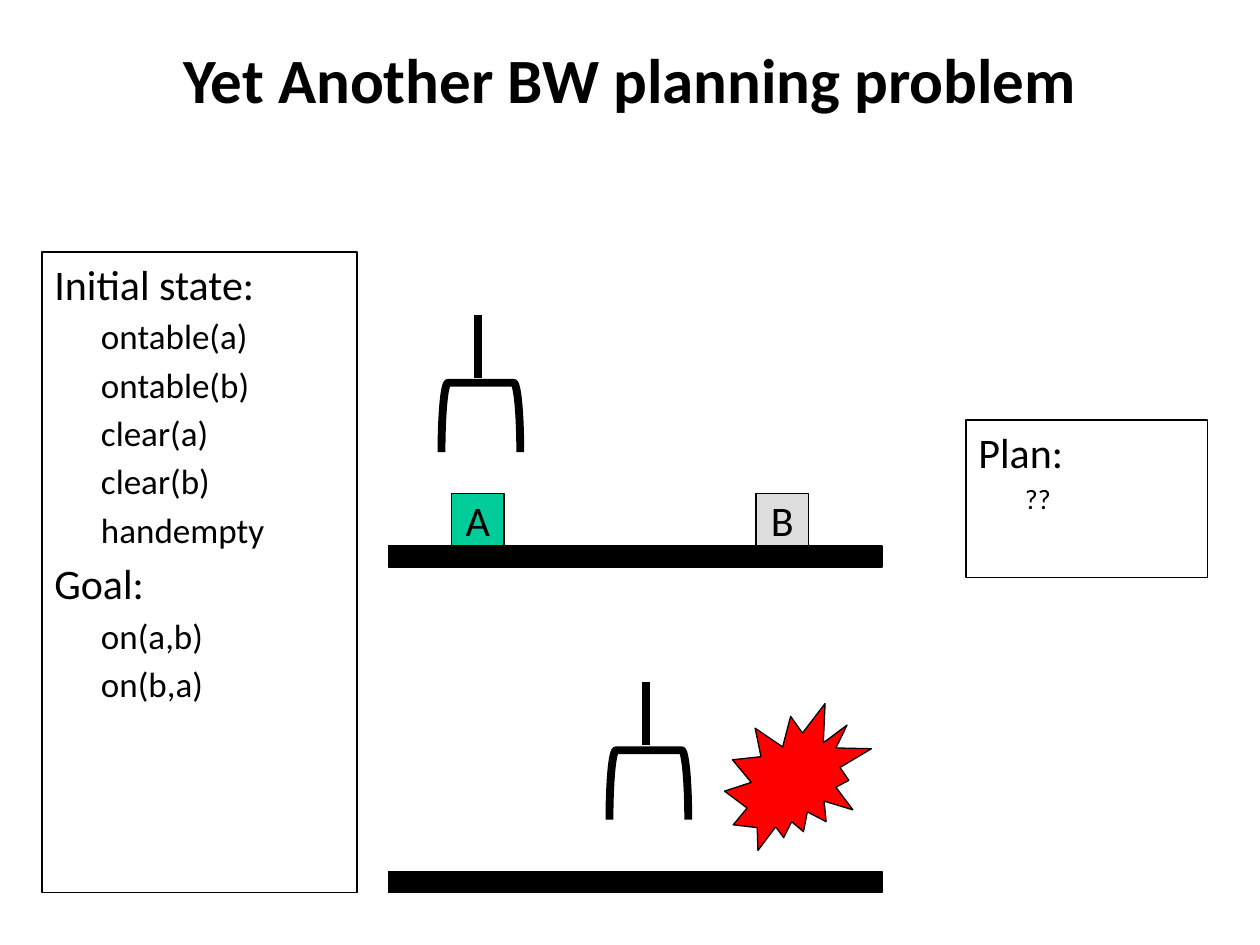
from lxml import etree
from pptx import Presentation
from pptx import util as u
from pptx.dml.color import RGBColor
from pptx.enum import shapes, text
from pptx.oxml import ns

BLACK = RGBColor(0x00, 0x00, 0x00)
GREEN = RGBColor(0x00, 0xCC, 0x99)
GREY = RGBColor(0xDD, 0xDD, 0xDD)
RED = RGBColor(0xFF, 0x00, 0x00)
FONT = "Calibri"

# Slide size and a grid of twelve units to the inch
WIDTH, HEIGHT = u.Inches(10), u.Inches(7.5)
UNIT = WIDTH / 120
BLOCK = 5
TABLE_LEFT, TABLE_WIDTH, TABLE_THICKNESS = 37, 47, 2


def grid(*units):
    return [u.Emu(round(n * UNIT)) for n in units]


def add_run(paragraph, words, size, bold=False):
    run = paragraph.add_run()
    run.text = words
    run.font.name = FONT
    run.font.size = u.Pt(size)
    run.font.bold = bold
    run.font.color.rgb = BLACK


def add_figure(slide, kind, box, fill=None, line_width=0.75):
    figure = slide.shapes.add_shape(kind, *grid(*box))
    figure.shadow.inherit = False
    if fill is None:
        figure.fill.background()
    else:
        figure.fill.solid()
        figure.fill.fore_color.rgb = fill
    figure.line.color.rgb = BLACK
    figure.line.width = u.Pt(line_width)
    return figure


def add_panel(slide, box, sections, item_size):
    """Framed outline: headings with indented items below them."""
    panel = add_figure(slide, shapes.MSO_SHAPE.RECTANGLE, box)
    frame = panel.text_frame
    frame.word_wrap = True
    frame.vertical_anchor = text.MSO_ANCHOR.TOP
    lines = []
    for heading, items in sections:
        lines.append((heading, 0, 24, 0.25))
        lines += [(item, 1, item_size, 0.62) for item in items]
    for index, (words, level, size, margin) in enumerate(lines):
        paragraph = frame.add_paragraph() if index else frame.paragraphs[0]
        paragraph.level = level
        paragraph.alignment = text.PP_ALIGN.LEFT
        paragraph.space_before = u.Pt(round(size * 0.18, 1))
        properties = paragraph._p.get_or_add_pPr()
        properties.set("marL", str(u.Inches(margin)))
        properties.set("indent", str(u.Inches(-0.25)))
        add_run(paragraph, words, size)


def add_block(slide, letter, left, table_top, fill):
    box = (left, table_top - BLOCK, BLOCK, BLOCK)
    block = add_figure(slide, shapes.MSO_SHAPE.RECTANGLE, box, fill)
    frame = block.text_frame
    frame.word_wrap = False
    frame.vertical_anchor = text.MSO_ANCHOR.MIDDLE
    frame.paragraphs[0].alignment = text.PP_ALIGN.CENTER
    add_run(frame.paragraphs[0], letter, 24)


def add_table_top(slide, top):
    add_figure(slide, shapes.MSO_SHAPE.RECTANGLE,
               (TABLE_LEFT, top, TABLE_WIDTH, TABLE_THICKNESS), BLACK)


def add_gripper(slide, center, top):
    """Robot hand: a bracket opening downwards below a vertical arm."""
    arm_length = 6
    hand = add_figure(slide, shapes.MSO_SHAPE.RIGHT_BRACKET,
                      (center - 3, top + arm_length, 6.6, 7.5), line_width=4.5)
    hand.rotation = 270
    hand.adjustments[0] = 0.095
    arm = slide.shapes.add_connector(
        shapes.MSO_CONNECTOR.STRAIGHT,
        *grid(center, top, center, top + arm_length))
    arm.line.color.rgb = BLACK
    arm.line.width = u.Pt(4.5)
    etree.SubElement(arm._element.spPr, ns.qn("a:effectLst"))


def add_title(slide, words):
    title = slide.shapes.title
    title.left, title.top, title.width, title.height = grid(9, 0, 102, 15)
    frame = title.text_frame
    frame.word_wrap = True
    frame.vertical_anchor = text.MSO_ANCHOR.MIDDLE
    frame.paragraphs[0].alignment = text.PP_ALIGN.CENTER
    add_run(frame.paragraphs[0], words, 36, bold=True)


def main():
    deck = Presentation()
    deck.slide_width, deck.slide_height = WIDTH, HEIGHT
    slide = deck.slides.add_slide(deck.slide_layouts[5])
    add_title(slide, "Yet Another BW planning problem")

    # Problem statement
    add_panel(slide, (4, 24, 30, 61), [
        ("Initial state:", ["ontable(a)", "ontable(b)", "clear(a)",
                            "clear(b)", "handempty"]),
        ("Goal:", ["on(a,b)", "on(b,a)"]),
    ], 20)

    # Initial state: both blocks on the table
    initial_top = 52
    add_table_top(slide, initial_top)
    add_block(slide, "A", 43, initial_top, GREEN)
    add_block(slide, "B", 72, initial_top, GREY)
    add_gripper(slide, 45.5, 30)

    # Goal state: impossible to reach
    add_table_top(slide, 83)
    add_gripper(slide, 61.5, 65)

    # Plan
    add_panel(slide, (92, 40, 23, 15), [("Plan:", ["??"])], 16)

    add_figure(slide, shapes.MSO_SHAPE.EXPLOSION2, (69, 67, 14, 14), RED)
    deck.save("out.pptx")


if __name__ == "__main__":
    main()
